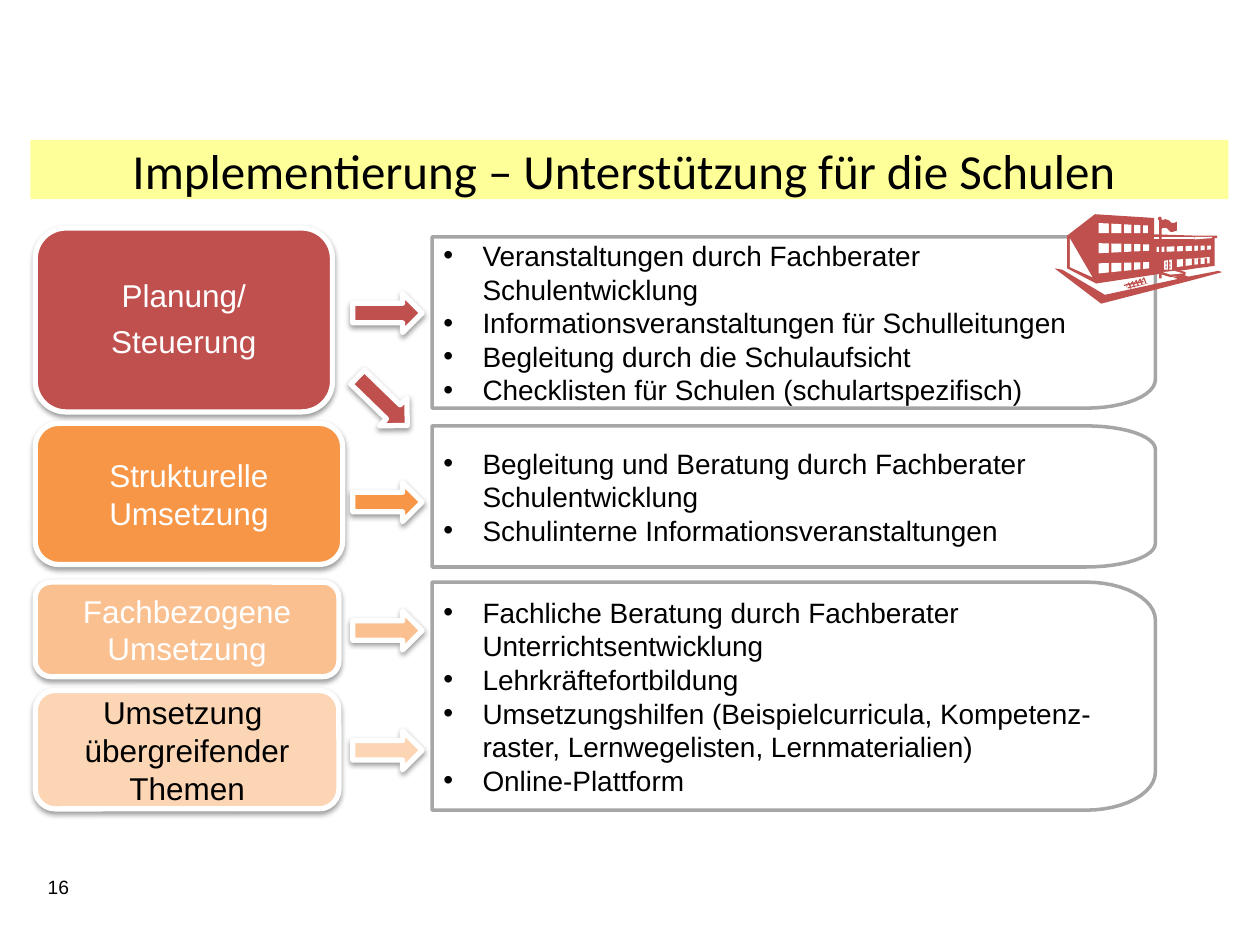
from dataclasses import dataclass
from math import cos, pi, sin

from lxml import etree
from pptx import Presentation
from pptx.dml.color import RGBColor
from pptx.enum.shapes import MSO_SHAPE
from pptx.enum.text import MSO_ANCHOR, MSO_AUTO_SIZE, PP_ALIGN
from pptx.oxml.ns import qn
from pptx.util import Inches, Pt

RECT, ROUND, ARROW = MSO_SHAPE.RECTANGLE, MSO_SHAPE.ROUNDED_RECTANGLE, MSO_SHAPE.RIGHT_ARROW
MIDDLE, CENTER, LEFT = MSO_ANCHOR.MIDDLE, PP_ALIGN.CENTER, PP_ALIGN.LEFT

BLACK = RGBColor(0x00, 0x00, 0x00)
WHITE = RGBColor(0xFF, 0xFF, 0xFF)
GRAY = RGBColor(0xA6, 0xA6, 0xA6)
YELLOW = RGBColor(0xFF, 0xFF, 0x99)
RED = RGBColor(0xC0, 0x50, 0x4D)
ORANGE = RGBColor(0xF7, 0x96, 0x46)
LIGHT_ORANGE = RGBColor(0xFA, 0xC0, 0x90)
PALE_ORANGE = RGBColor(0xFC, 0xD5, 0xB5)

# Columns of the slide, in inches
CARD_X, ARROW_X, PANEL_X = 0.28, 2.8, 3.43
ARROW_W, ARROW_H, PANEL_W = 0.55, 0.31, 5.74
BULLET_INDENT = 0.31


@dataclass
class Card:
    lines: list[str]
    top: float
    width: float
    height: float
    color: RGBColor
    arrow_top: float
    text_color: RGBColor = WHITE
    line_spacing: float = 1.0
    gap: float = 0


@dataclass
class Panel:
    bullets: list[str]
    top: float
    height: float


CARDS = [
    Card(["Planung/", "Steuerung"], 1.81, 2.36, 1.46, RED, 2.33, line_spacing=0.9, gap=7),
    Card(["Strukturelle Umsetzung"], 3.36, 2.44, 1.12, ORANGE, 3.83),
    Card(["Fachbezogene Umsetzung"], 4.62, 2.41, 0.75, LIGHT_ORANGE, 4.85),
    Card(["Umsetzung ", "übergreifender Themen"], 5.48, 2.41, 0.94, PALE_ORANGE, 5.8, BLACK),
]
PANELS = [
    Panel(["Veranstaltungen durch Fachberater Schulentwicklung",
           "Informationsveranstaltungen für Schulleitungen",
           "Begleitung durch die Schulaufsicht",
           "Checklisten für Schulen (schulartspezifisch)"], 1.88, 1.36),
    Panel(["Begleitung und Beratung durch Fachberater Schulentwicklung",
           "Schulinterne Informationsveranstaltungen"], 3.38, 1.12),
    Panel(["Fachliche Beratung durch Fachberater Unterrichtsentwicklung",
           "Lehrkräftefortbildung",
           "Umsetzungshilfen (Beispielcurricula, Kompetenz-raster, "
           "Lernwegelisten, Lernmaterialien)",
           "Online-Plattform"], 4.62, 1.81),
]

# School building: outlines, then the bars that divide its windows
WALLS = [(9.48, 1.87), (9.16, 1.86), (9.16, 1.73), (8.69, 1.7), (8.47, 1.87), (8.47, 2.13),
         (8.7, 2.25), (9.49, 2.13), (9.64, 2.11), (9.64, 1.89), (9.66, 1.89), (9.66, 1.87)]
OPENINGS = [
    [(9.61, 1.98), (9.61, 1.95), (9.5, 1.95), (9.5, 1.99)],
    [(9.6, 2.09), (9.6, 2.04), (9.5, 2.05), (9.49, 2.1)],
    [(9.34, 2.12), (9.49, 2.1), (9.5, 2.05), (9.34, 2.06)],
    [(9.18, 2), (9.5, 1.99), (9.5, 1.95), (9.18, 1.96)],
    [(9.24, 2.14), (9.24, 2.07), (9.3, 2.06), (9.3, 2.14)],
    [(9.62, 1.89), (9.62, 1.88), (9.48, 1.88), (9.48, 1.9)],
    [(9.16, 1.9), (9.48, 1.9), (9.48, 1.88), (9.16, 1.88)],
    [(8.72, 1.77), (8.72, 1.85), (9.11, 1.85), (9.11, 1.79)],
    [(8.72, 1.93), (8.72, 2.01), (9.12, 1.99), (9.12, 1.94)],
    [(8.72, 2.09), (8.72, 2.17), (9.12, 2.13), (9.12, 2.08)],
    [(8.49, 1.89), (8.49, 2.12), (8.67, 2.2)],
]
GROUNDS = [
    [(9.19, 2.17), (9.29, 2.2), (9.41, 2.18), (9.41, 2.16), (9.34, 2.14)],
    [(9.7, 2.16), (9.67, 2.15), (9.46, 2.19), (8.77, 2.34), (8.43, 2.14), (8.37, 2.13),
     (8.74, 2.41), (9.44, 2.23)],
    [(9.31, 2.2), (9.39, 2.23), (9.47, 2.21), (9.39, 2.18)],
    [(9.1, 2.25), (9.11, 2.25), (8.95, 2.29), (8.95, 2.28)],
    [(9.07, 2.23), (9.08, 2.24), (8.92, 2.27), (8.92, 2.26)],
]
PATH = [(9.39, 2.17), (9.29, 2.18), (9.23, 2.16), (9.32, 2.15)]
FLAG = [(9.21, 1.75), (9.25, 1.74), (9.28, 1.75), (9.3, 1.77), (9.32, 1.77), (9.34, 1.76),
        (9.34, 1.83), (9.31, 1.84), (9.29, 1.84), (9.26, 1.81), (9.23, 1.81), (9.21, 1.82)]
ARCH = [(9.09, 2.25), (9.08, 2.22), (9.07, 2.22), (9.06, 2.24), (9.06, 2.23), (9.07, 2.21),
        (9.08, 2.2), (9.09, 2.22), (9.1, 2.25)]
# lefts, top, width, height
BARS = [
    ([9.24, 9.32, 9.39, 9.46, 9.51, 9.56], 1.93, 0.02, 0.07),
    ([9.39, 9.46, 9.51, 9.56], 2.05, 0.02, 0.07),
    ([8.8, 8.9, 8.98, 9.05], 1.76, 0.02, 0.42),
    ([9.27], 2.06, 0.01, 0.09),
    ([9.25, 9.28], 2.08, 0.01, 0.02),
    ([9.25, 9.28], 2.11, 0.01, 0.02),
    ([9.2], 1.74, 0.02, 0.47),
]


def style(sp, fill: RGBColor, line: RGBColor | None = None, width: float = 0) -> None:
    sp.shadow.inherit = False
    sp.fill.solid()
    sp.fill.fore_color.rgb = fill
    if line is None:
        sp.line.fill.background()
    else:
        sp.line.color.rgb = line
        sp.line.width = Pt(width)


def add_preset(shapes, kind, box, fill: RGBColor, line: RGBColor | None = None):
    sp = shapes.add_shape(kind, *map(Inches, box))
    style(sp, fill, line, 3)
    return sp


def add_polygon(shapes, points, fill: RGBColor, line: RGBColor | None = None):
    start, *rest = [(Inches(x), Inches(y)) for x, y in points]
    builder = shapes.build_freeform(*start)
    builder.add_line_segments(rest, close=True)
    sp = builder.convert_to_shape()
    style(sp, fill, line, 2)
    return sp


def cast_shadow(sp) -> None:
    effects = sp._element.spPr.find(qn("a:effectLst"))
    shadow = etree.SubElement(effects, qn("a:outerShdw"), blurRad=str(Pt(3.1)),
                              dist=str(Pt(1.6)), dir="5400000", rotWithShape="0")
    color = etree.SubElement(shadow, qn("a:srgbClr"), val="000000")
    etree.SubElement(color, qn("a:alpha"), val="38000")


def write(tf, lines, size, color, align=LEFT, font="Arial", bullet=False, spacing=None, gap=0):
    tf.word_wrap = True
    for i, line in enumerate(lines):
        p = tf.paragraphs[0] if i == 0 else tf.add_paragraph()
        p.alignment = align
        if spacing:
            p.line_spacing = spacing
        if i and gap:
            p.space_before = Pt(gap)
        if bullet:
            pPr = p._p.get_or_add_pPr()
            pPr.set("marL", str(Inches(BULLET_INDENT)))
            pPr.set("indent", str(-Inches(BULLET_INDENT)))
            etree.SubElement(pPr, qn("a:buFont"), typeface="Arial")
            etree.SubElement(pPr, qn("a:buChar"), char="•")
        r = p.add_run()
        r.text = line
        r.font.color.rgb = color
        for name, value in {"name": font, "size": Pt(size)}.items():
            setattr(r.font, name, value)


def add_panel(shapes, panel: Panel) -> None:
    """Draw a bulleted box whose right corners are quarter ellipses."""
    rx, ry = 0.55, panel.height / 6
    right, bottom = PANEL_X + PANEL_W, panel.top + panel.height
    arc = [(right - rx + rx * sin(i * pi / 24), ry * (1 - cos(i * pi / 24))) for i in range(13)]
    points = [(PANEL_X, panel.top), *[(x, panel.top + dy) for x, dy in arc],
              *[(x, bottom - dy) for x, dy in reversed(arc)], (PANEL_X, bottom)]
    tf = add_polygon(shapes, points, WHITE, GRAY).text_frame
    margins = {"margin_left": 0.09, "margin_right": 0.22, "margin_top": 0.18, "margin_bottom": 0.18}
    for name, value in margins.items():
        setattr(tf, name, Inches(value))
    tf.vertical_anchor = MIDDLE
    write(tf, panel.bullets, 16, BLACK, bullet=True)


def add_arrow(shapes, left: float, top: float, color: RGBColor, rotation: float = 0) -> None:
    sp = add_preset(shapes, ARROW, (left, top, ARROW_W, ARROW_H), color, WHITE)
    sp.rotation = rotation
    cast_shadow(sp)


def add_card(shapes, card: Card) -> None:
    sp = add_preset(shapes, ROUND, (CARD_X, card.top, card.width, card.height), card.color, WHITE)
    cast_shadow(sp)
    sp.text_frame.vertical_anchor = MIDDLE
    write(sp.text_frame, card.lines, 18, card.text_color, CENTER,
          spacing=card.line_spacing, gap=card.gap)
    add_arrow(shapes, ARROW_X, card.arrow_top, card.color)


def add_school(shapes) -> None:
    arches = [[(x - i * 0.03, y + i * 0.01) for x, y in ARCH] for i in range(5)]
    layers = [([WALLS], RED), (OPENINGS, WHITE), (GROUNDS, RED), ([PATH], WHITE),
              ([FLAG, *arches], RED)]
    for outlines, color in layers:
        for points in outlines:
            add_polygon(shapes, points, color)
    for lefts, top, width, height in BARS:
        for left in lefts:
            add_preset(shapes, RECT, (left, top, width, height), RED)
    add_preset(shapes, MSO_SHAPE.OVAL, (9.19, 1.72, 0.03, 0.03), RED)


def main() -> None:
    prs = Presentation()
    prs.slide_width, prs.slide_height = Inches(10), Inches(7.5)
    slide = prs.slides.add_slide(prs.slide_layouts[5])
    shapes = slide.shapes

    title = shapes.title
    title.left, title.top, title.width, title.height = map(Inches, (0.24, 1.11, 9.51, 0.47))
    title.fill.solid()
    title.fill.fore_color.rgb = YELLOW
    title.text_frame.auto_size = MSO_AUTO_SIZE.NONE
    title.text_frame.vertical_anchor = MIDDLE
    write(title.text_frame, ["Implementierung – Unterstützung für die Schulen "], 28, BLACK,
          CENTER, "Calibri")

    for panel in PANELS:
        add_panel(shapes, panel)
    for card in CARDS:
        add_card(shapes, card)
    add_arrow(shapes, 2.76, 3.03, RED, rotation=44.2)
    add_school(shapes.add_group_shape().shapes)

    number = shapes.add_textbox(*map(Inches, (CARD_X, 6.9, 0.55, 0.29)))
    write(number.text_frame, ["16"], 11, BLACK)
    prs.save("out.pptx")


if __name__ == "__main__":
    main()
